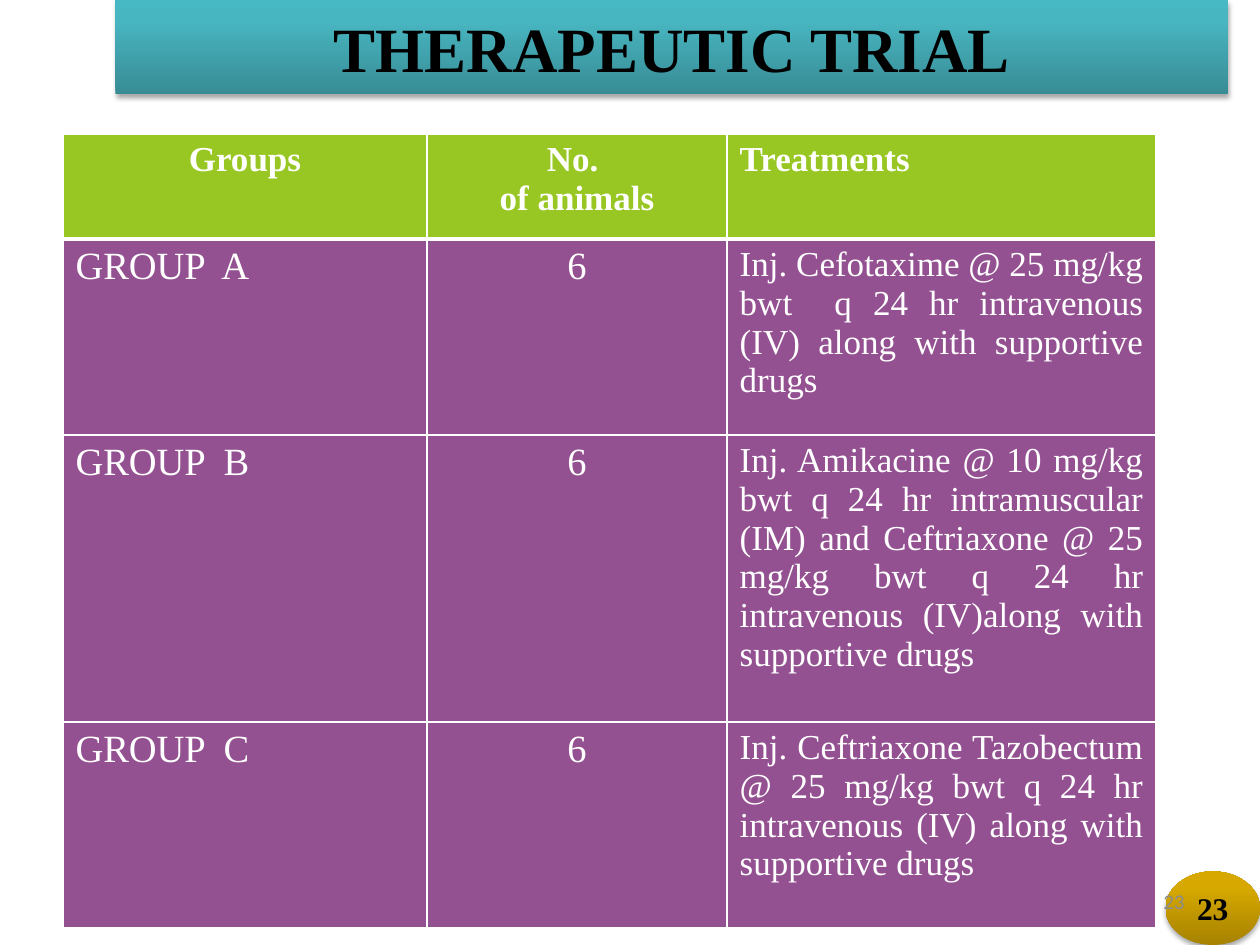
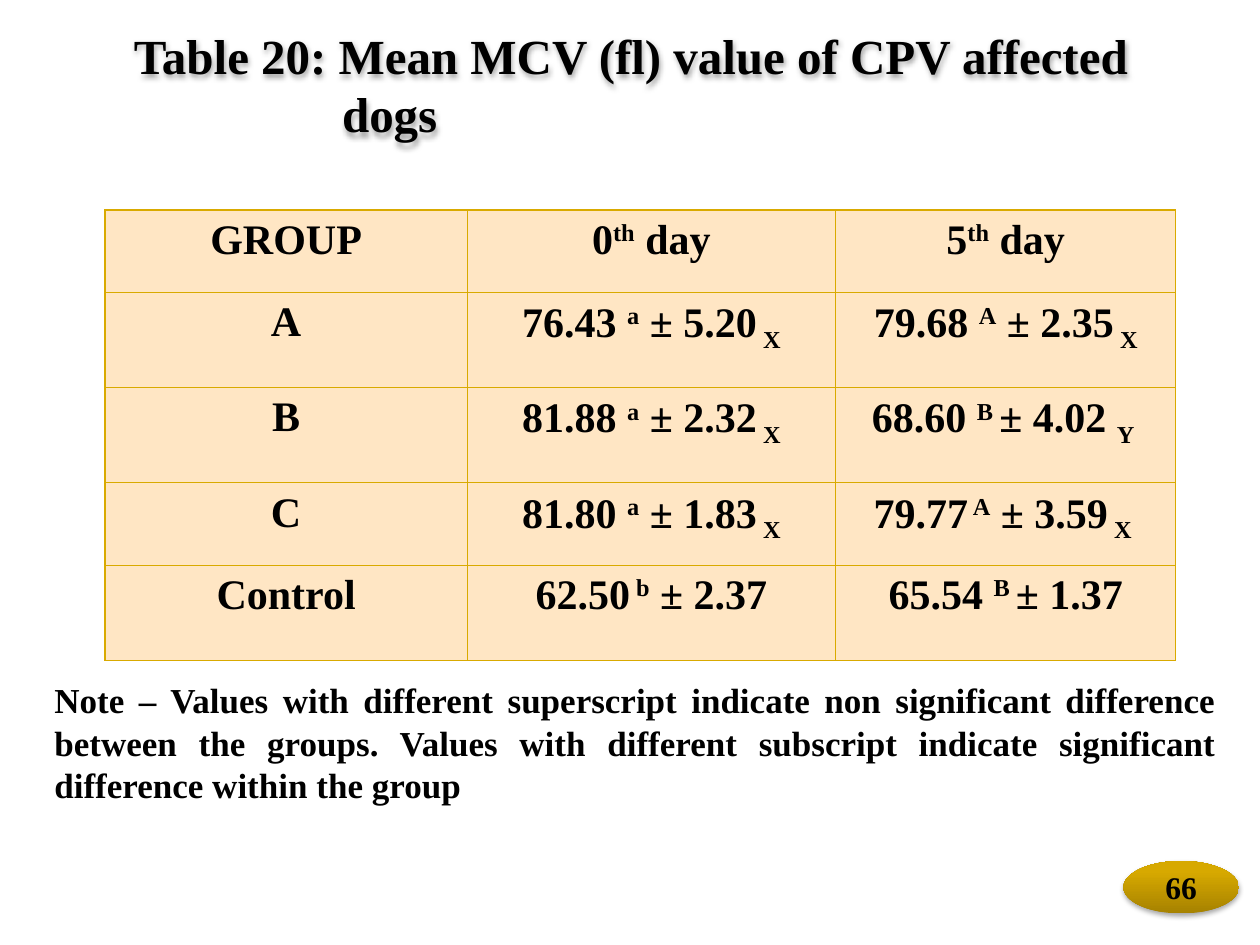
from pptx import Presentation
from pptx.dml.color import RGBColor
from pptx.enum.shapes import MSO_SHAPE
from pptx.enum.text import MSO_ANCHOR, PP_ALIGN
from pptx.oxml import parse_xml
from pptx.oxml.ns import nsdecls, qn
from pptx.util import Pt

# Shared style
SERIF, SANS = "Times New Roman", "Calibri"
BLACK = RGBColor(0x00, 0x00, 0x00)
WHITE = RGBColor(0xFF, 0xFF, 0xFF)
GREY = RGBColor(0x8C, 0x8C, 0x8C)
GREEN = RGBColor(0x98, 0xC7, 0x23)
PURPLE = RGBColor(0x94, 0x51, 0x91)
CREAM = RGBColor(0xFF, 0xE6, 0xC4)
GOLD = RGBColor(0xD9, 0xAA, 0x00)
TEAL_STOPS = [(0, RGBColor(0x38, 0x8C, 0x95)), (80, RGBColor(0x48, 0xB6, 0xC1)),
              (100, RGBColor(0x46, 0xB9, 0xC4))]
GOLD_STOPS = [(0, RGBColor(0xA6, 0x82, 0x00)), (80, RGBColor(0xD7, 0xA9, 0x00)),
              (100, RGBColor(0xD8, 0xA9, 0x00))]
LEFT, CENTER, RIGHT, JUSTIFY = PP_ALIGN.LEFT, PP_ALIGN.CENTER, PP_ALIGN.RIGHT, PP_ALIGN.JUSTIFY

# Therapeutic trial content
TRIAL_TITLE = ["THERAPEUTIC TRIAL"]
TRIAL_PAGE = "23"
TRIAL_HEADER = ["Groups", "No. \nof animals", "Treatments"]
TRIAL_GROUPS = [
    ["GROUP  A", "6",
     "Inj. Cefotaxime @ 25 mg/kg bwt  q 24 hr intravenous (IV) along with supportive drugs"],
    ["GROUP  B", "6",
     "Inj. Amikacine @ 10 mg/kg bwt q 24 hr intramuscular (IM) and Ceftriaxone @ 25 mg/kg bwt "
     "q 24 hr intravenous (IV)along with supportive drugs"],
    ["GROUP  C", "6",
     "Inj. Ceftriaxone Tazobectum @ 25 mg/kg bwt q 24 hr intravenous (IV) along with "
     "supportive drugs"],
]
TRIAL_COLUMNS = [208, 171.5, 245]
TRIAL_ROWS = [60, 112, 164, 117.5]
TRIAL_HEADER_ALIGN = [CENTER, CENTER, JUSTIFY]
TRIAL_ALIGN = [JUSTIFY, CENTER, JUSTIFY]
TRIAL_SIZES = [22, 22, 20]

# MCV content: each cell is (text, superscript, text, subscript)
MCV_TITLE = ["Table 20: Mean MCV (fl) value of CPV affected", "dogs"]
MCV_PAGE = "66"
MCV_ROWS = [
    [("GROUP",), ("0", "th", " day"), ("5", "th", " day")],
    [("A",), ("76.43 ", "a", " ± 5.20", " X"), ("79.68 ", "A", " ± 2.35", " X")],
    [("B",), ("81.88 ", "a", " ± 2.32", " X"), ("68.60 ", "B ", "± 4.02 ", "Y ")],
    [("C",), ("81.80 ", "a", " ± 1.83", " X"), ("79.77", " A", " ± 3.59", " X ")],
    [("Control",), ("62.50", " b", " ± 2.37"), ("65.54 ", "B ", "± 1.37")],
]
MCV_COLUMNS = [207, 210.5, 194.5]
MCV_HEIGHTS = [47, 54.5, 54.5, 47, 54.5]
BASELINES = (0, 30000, 0, -25000)
MCV_NOTE = ("Note – Values with different superscript indicate non significant difference "
            "between the groups. Values with different subscript indicate significant "
            "difference within the group")


def style(paragraph, size, color=BLACK, bold=True, align=CENTER, face=SERIF):
    font = paragraph.font
    font.name, font.size, font.bold = face, Pt(size), bold
    font.color.rgb = color
    paragraph.alignment = align


def add_shadow(shape):
    shape.shadow.inherit = False
    effects = shape._element.spPr.find(qn("a:effectLst"))
    effects.append(parse_xml(
        f'<a:outerShdw {nsdecls("a")} blurRad="{Pt(3.1)}" dist="{Pt(1.8)}" dir="5400000" '
        'rotWithShape="0"><a:srgbClr val="000000"><a:alpha val="35000"/></a:srgbClr>'
        '</a:outerShdw>'))


def fill_gradient(shape, stops):
    shape.line.fill.background()
    marks = "".join(f'<a:gs pos="{pos * 1000}"><a:srgbClr val="{color}"/></a:gs>'
                    for pos, color in stops)
    shape._element.spPr.find(qn("a:ln")).addprevious(parse_xml(
        f'<a:gradFill {nsdecls("a")} rotWithShape="1"><a:gsLst>{marks}</a:gsLst>'
        '<a:lin ang="16200000" scaled="0"/></a:gradFill>'))


def add_title(slide, lines, box, size, align):
    title = slide.shapes.title
    title.left, title.top, title.width, title.height = map(Pt, box)
    frame = title.text_frame
    frame.text = "\n".join(lines)
    frame.vertical_anchor = MSO_ANCHOR.MIDDLE
    for paragraph in frame.paragraphs:
        style(paragraph, size, align=align)
    return title


def add_page_oval(slide, page, box):
    oval = slide.shapes.add_shape(MSO_SHAPE.OVAL, *map(Pt, box))
    fill_gradient(oval, GOLD_STOPS)
    add_shadow(oval)
    oval.text_frame.text = page
    oval.text_frame.vertical_anchor = MSO_ANCHOR.MIDDLE
    style(oval.text_frame.paragraphs[0], 18)


def add_text(slide, text, box, **look):
    frame = slide.shapes.add_textbox(*map(Pt, box)).text_frame
    frame.word_wrap = True
    frame.vertical_anchor = MSO_ANCHOR.MIDDLE
    frame.text = text
    style(frame.paragraphs[0], **look)


def add_grid(slide, left, top, widths, heights):
    table = slide.shapes.add_table(len(heights), len(widths), Pt(left), Pt(top),
                                   Pt(sum(widths)), Pt(sum(heights))).table
    table.first_row = table.horz_banding = False
    for column, width in zip(table.columns, widths):
        column.width = Pt(width)
    for row, height in zip(table.rows, heights):
        row.height = Pt(height)
    return table


def paint_cell(cell, fill, border, widths):
    """Fill a cell and draw its left, right, top and bottom borders."""
    cell.fill.solid()
    cell.fill.fore_color.rgb = fill
    for place, (side, width) in enumerate(zip("LRTB", widths)):
        cell._tc.get_or_add_tcPr().insert(place, parse_xml(
            f'<a:ln{side} {nsdecls("a")} w="{Pt(width)}"><a:solidFill>'
            f'<a:srgbClr val="{border}"/></a:solidFill></a:ln{side}>'))


def build_trial(slide):
    title = add_title(slide, TRIAL_TITLE, (66, 0, 636, 54), 36, CENTER)
    fill_gradient(title, TEAL_STOPS)
    add_shadow(title)
    add_page_oval(slide, TRIAL_PAGE, (666, 498, 54, 42))

    # Treatment table
    table = add_grid(slide, 36, 76.5, TRIAL_COLUMNS, TRIAL_ROWS)
    for r, row in enumerate([TRIAL_HEADER] + TRIAL_GROUPS):
        header = r == 0
        aligns = TRIAL_HEADER_ALIGN if header else TRIAL_ALIGN
        for c, text in enumerate(row):
            cell = table.cell(r, c)
            cell.text = text
            paint_cell(cell, GREEN if header else PURPLE, WHITE,
                       (1, 1, 3 if r == 1 else 1, 3 if header else 1))
            for paragraph in cell.text_frame.paragraphs:
                style(paragraph, 20 if header else TRIAL_SIZES[c], WHITE, header, aligns[c])

    # Small page number beside the oval
    add_text(slide, TRIAL_PAGE, (516, 500.5, 168, 28.75), size=12, color=GREY, bold=False,
             align=RIGHT, face=SANS)


def build_mcv(slide):
    title = add_title(slide, MCV_TITLE, (66, 12, 594, 72), 28, LEFT)
    title.text_frame.margin_left, title.text_frame.margin_right = Pt(10.5), 0
    title.text_frame.paragraphs[1]._p.get_or_add_pPr().set("marL", str(Pt(119)))
    add_shadow(title)

    # Mean values table
    table = add_grid(slide, 60, 120, MCV_COLUMNS, MCV_HEIGHTS)
    for r, row in enumerate(MCV_ROWS):
        for c, parts in enumerate(row):
            cell = table.cell(r, c)
            cell.margin_left = cell.margin_right = Pt(5)
            cell.margin_top = cell.margin_bottom = 0
            paint_cell(cell, CREAM, GOLD, [0.75] * 4)
            paragraph = cell.text_frame.paragraphs[0]
            style(paragraph, 24)
            paragraph.line_spacing = 1.15
            for text, baseline in zip(parts, BASELINES):
                run = paragraph.add_run()
                run.text = text
                if baseline:
                    run.font._element.set("baseline", str(baseline))

    add_page_oval(slide, MCV_PAGE, (642, 492, 66, 30))
    add_text(slide, MCV_NOTE, (24, 384, 678, 80), size=20, align=JUSTIFY)


def main():
    deck = Presentation()
    deck.slide_width, deck.slide_height = Pt(720), Pt(540)
    title_only = deck.slide_layouts[5]
    for build in (build_trial, build_mcv):
        build(deck.slides.add_slide(title_only))
    deck.save("out.pptx")


if __name__ == "__main__":
    main()
